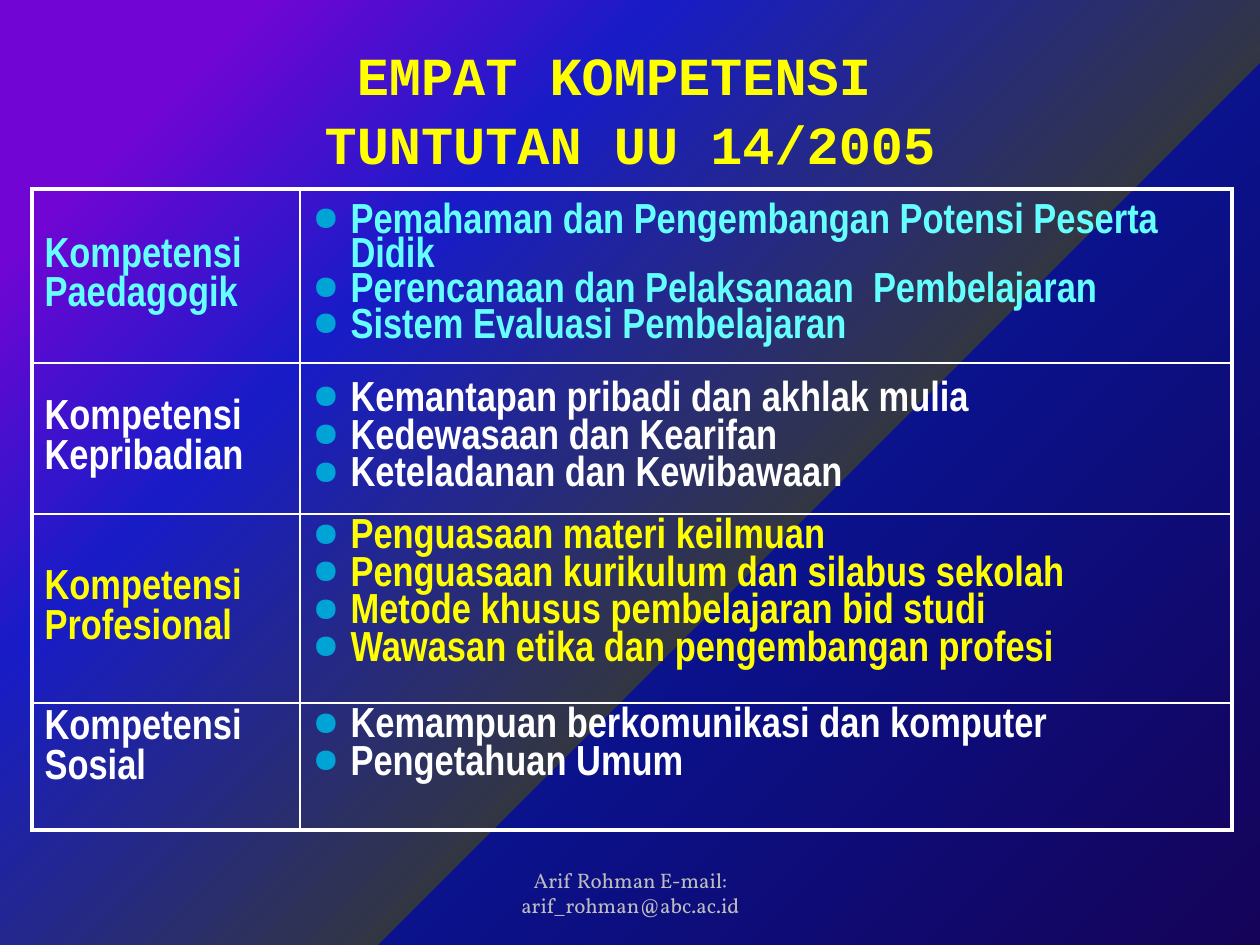
from lxml import etree
from pptx import Presentation
from pptx.dml.color import RGBColor
from pptx.enum.text import MSO_ANCHOR as Anchor, MSO_AUTO_SIZE as AutoSize, PP_ALIGN as Align
from pptx.oxml import parse_xml
from pptx.oxml.ns import nsdecls, qn
from pptx.util import Pt

EMU_PER_PX = 914400 / 126
YELLOW = RGBColor(0xFF, 0xFF, 0x00)
CYAN = RGBColor(0x66, 0xFF, 0xFF)
WHITE = RGBColor(0xFF, 0xFF, 0xFF)
GREY = RGBColor(0xBD, 0xBD, 0xBD)
BULLET_BLUE = RGBColor(0x00, 0xA3, 0xD6)
GRADIENT = [(0, "150359"), (40, "0A128C"), (40, "323643"), (70, "181CC7"), (88, "7005D4")]
NO_STYLE = "{2D5ABB26-0587-4C30-8999-92F81FD0307C}"
THICK, THIN = 2.25, 1

COLUMN_WIDTHS = [268, 902, 29]
ROW_HEIGHTS = [174, 151, 189, 127]
# name, colour, bullet line spacing, name anchor, bullet anchor, bullets
COMPETENCIES = [
    ("Kompetensi Paedagogik", CYAN, 0.85, Anchor.MIDDLE, Anchor.MIDDLE,
     ["Pemahaman dan Pengembangan Potensi Peserta Didik",
      "Perencanaan dan Pelaksanaan  Pembelajaran",
      "Sistem Evaluasi Pembelajaran"]),
    ("Kompetensi Kepribadian", WHITE, 0.9, Anchor.MIDDLE, Anchor.MIDDLE,
     ["Kemantapan pribadi dan akhlak mulia",
      "Kedewasaan dan Kearifan",
      "Keteladanan dan Kewibawaan"]),
    ("Kompetensi Profesional", YELLOW, 0.9, Anchor.MIDDLE, Anchor.TOP,
     ["Penguasaan materi keilmuan",
      "Penguasaan kurikulum dan silabus sekolah",
      "Metode khusus pembelajaran bid studi",
      "Wawasan etika dan pengembangan profesi"]),
    ("Kompetensi  Sosial", WHITE, 0.9, Anchor.TOP, Anchor.TOP,
     ["Kemampuan berkomunikasi dan komputer",
      "Pengetahuan Umum"]),
]


def px(length):
    return round(length * EMU_PER_PX)


def style_runs(para, font, size, color, bold=False):
    for span in para.runs:
        span.font.name = font
        span.font.size = Pt(size)
        span.font.bold = bold
        span.font.color.rgb = color


def set_background(page):
    stops = "".join(f'<a:gs pos="{percent * 1000}"><a:srgbClr val="{color}"/></a:gs>'
                    for percent, color in GRADIENT)
    page.element.cSld.insert(0, parse_xml(
        f'<p:bg {nsdecls("p", "a")}><p:bgPr><a:gradFill rotWithShape="0">'
        f'<a:gsLst>{stops}</a:gsLst><a:path path="circle">'
        '<a:fillToRect l="100000" t="100000"/></a:path></a:gradFill>'
        '<a:effectLst/></p:bgPr></p:bg>'))


def place_title(page):
    title = page.shapes.title
    title.left, title.top, title.width, title.height = px(63), px(38), px(1134), px(136)
    frame = title.text_frame
    frame.text = "EMPAT KOMPETENSI \vTUNTUTAN UU 14/2005"
    frame.auto_size = AutoSize.NONE
    frame.vertical_anchor = Anchor.MIDDLE
    para = frame.paragraphs[0]
    para.alignment = Align.CENTER
    para.line_spacing = 1.07
    style_runs(para, "Courier New", 30.6, YELLOW, bold=True)


def set_borders(cell, widths):
    """Draw white borders; widths maps the sides L, R, T and B to points, 0 for none."""
    props = cell._tc.get_or_add_tcPr()
    for index, side in enumerate("LRTB"):
        width = widths[side]
        fill = f'<a:solidFill><a:srgbClr val="{WHITE}"/></a:solidFill>' if width else "<a:noFill/>"
        props.insert(index, parse_xml(
            f'<a:ln{side} {nsdecls("a")} w="{Pt(width)}">{fill}</a:ln{side}>'))


def add_bullet(para):
    props = para._p.get_or_add_pPr()
    props.set("marL", str(px(38)))
    props.set("indent", str(-px(38)))
    color = etree.SubElement(props, qn("a:buClr"))
    etree.SubElement(color, qn("a:srgbClr")).set("val", str(BULLET_BLUE))
    etree.SubElement(props, qn("a:buSzPct")).set("val", "80000")
    etree.SubElement(props, qn("a:buChar")).set("char", "●")


def fill_cell(cell, lines, color, anchor, space_before, bullet_spacing=None):
    """Write one paragraph per line, bulleted when bullet_spacing is given."""
    cell.text_frame.text = "\n".join(lines)
    cell.vertical_anchor = anchor
    for para in cell.text_frame.paragraphs:
        para.space_before = Pt(space_before)
        if bullet_spacing:
            para.line_spacing = bullet_spacing
            add_bullet(para)
        style_runs(para, "Arial Narrow", 24, color, bold=True)


def add_competency_table(page):
    last_row, last_column = len(ROW_HEIGHTS) - 1, len(COLUMN_WIDTHS) - 1
    table = page.shapes.add_table(
        len(ROW_HEIGHTS), len(COLUMN_WIDTHS), px(32), px(189),
        px(sum(COLUMN_WIDTHS)), px(sum(ROW_HEIGHTS))).table
    table.first_row = table.horz_banding = False
    table._tbl.tblPr.find(qn("a:tableStyleId")).text = NO_STYLE
    for column, width in zip(table.columns, COLUMN_WIDTHS):
        column.width = px(width)
    for row, height in zip(table.rows, ROW_HEIGHTS):
        row.height = px(height)

    for r, (name, color, spacing, name_anchor, list_anchor, bullets) in enumerate(COMPETENCIES):
        fill_cell(table.cell(r, 0), [name], color, name_anchor, 4.8)
        fill_cell(table.cell(r, 1), bullets, color, list_anchor, 1.2, spacing)
        for c in range(last_column + 1):
            cell = table.cell(r, c)
            cell.fill.background()
            set_borders(cell, {
                "L": (THICK, THIN, 0)[c],
                "R": (THIN, 0, THICK)[c],
                "T": THICK if r == 0 else THIN,
                "B": THICK if r == last_row else THIN,
            })


def add_footer(page):
    box = page.shapes.add_textbox(px(431), px(861), px(399), px(63))
    frame = box.text_frame
    frame.word_wrap = True
    frame.vertical_anchor = Anchor.BOTTOM
    frame.text = "Arif Rohman E-mail: arif_rohman@abc.ac.id"
    para = frame.paragraphs[0]
    para.alignment = Align.CENTER
    style_runs(para, "Vollkorn", 12, GREY)


def main():
    deck = Presentation()
    deck.slide_width, deck.slide_height = px(1260), px(945)
    page = deck.slides.add_slide(deck.slide_layouts[5])
    set_background(page)
    place_title(page)
    add_competency_table(page)
    add_footer(page)
    deck.save("out.pptx")


if __name__ == "__main__":
    main()
